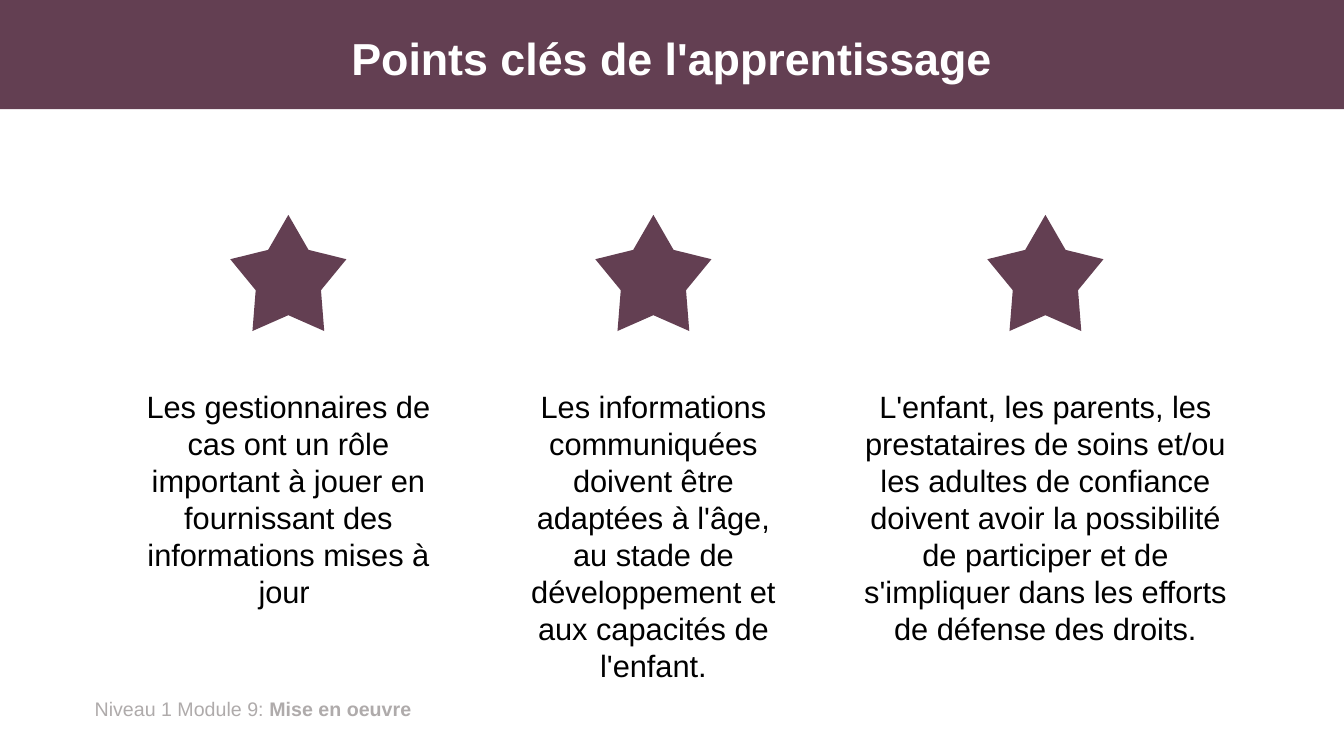
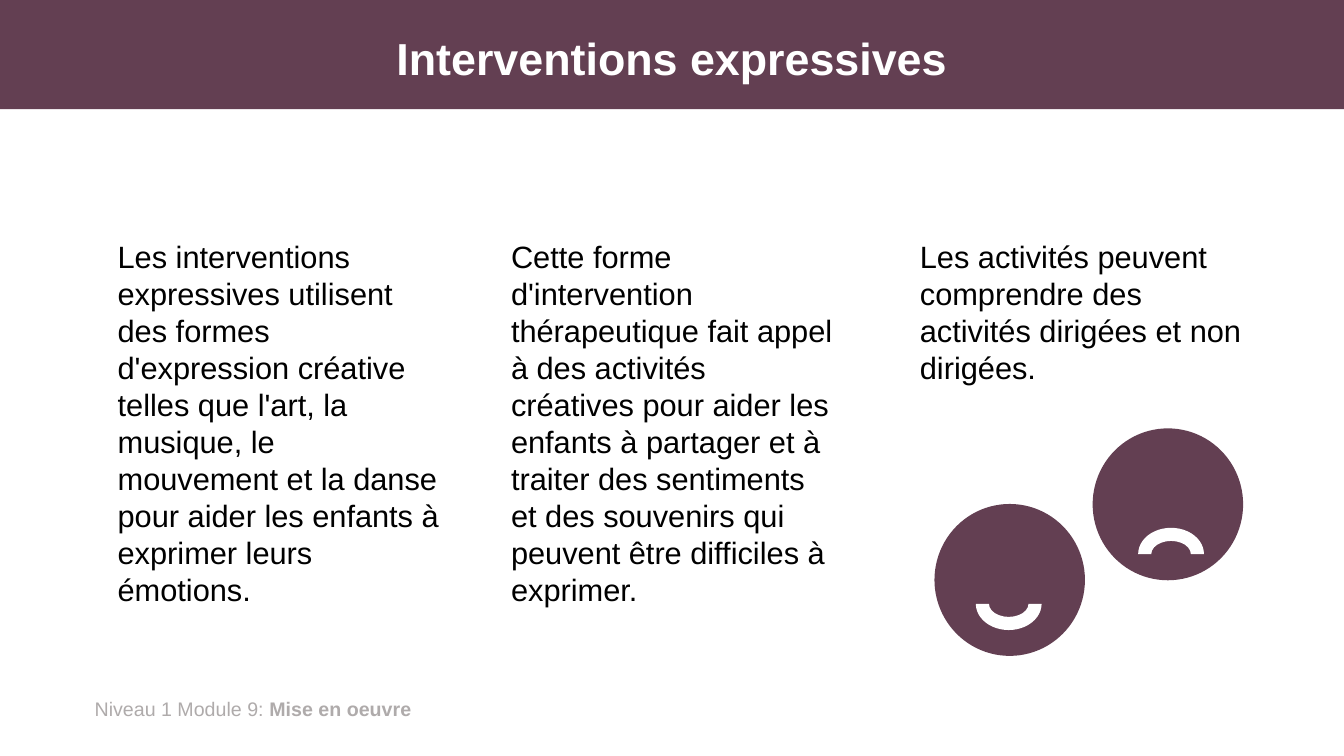
"""Build two training slides: key learning points and expressive interventions."""
from pptx import Presentation
from pptx.dml.color import RGBColor
from pptx.enum.shapes import MSO_SHAPE as Preset
from pptx.enum.text import MSO_ANCHOR as Anchor, MSO_AUTO_SIZE as AutoSize, PP_ALIGN as Align
from pptx.util import Pt

PLUM = RGBColor(0x63, 0x3F, 0x52)
WHITE = RGBColor(0xFF, 0xFF, 0xFF)
BLACK = RGBColor(0x00, 0x00, 0x00)
GREY = RGBColor(0xAF, 0xAB, 0xAB)

TITLES = ["Points clés de l'apprentissage", "Interventions expressives"]
KEY_POINTS = [
    (85, 242, "Les gestionnaires de cas ont un rôle important à jouer en "
              "fournissant des informations mises à jour "),
    (366, 201.5, "Les informations communiquées doivent être adaptées à l'âge, au stade de "
                 "développement et aux capacités de l'enfant."),
    (607, 279.5, "L'enfant, les parents, les prestataires de soins et/ou les adultes de "
                 "confiance doivent avoir la possibilité de participer et de s'impliquer "
                 "dans les efforts de défense des droits."),
]
INTERVENTIONS = [
    (77, 194, "Les interventions expressives utilisent des formes d'expression créative "
              "telles que l'art, la musique, le mouvement et la danse pour aider les "
              "enfants à exprimer leurs émotions."),
    (358, 220, "Cette forme d'intervention thérapeutique fait appel à des activités "
               "créatives pour aider les enfants à partager et à traiter des sentiments "
               "et des souvenirs qui peuvent être difficiles à exprimer."),
    (650, 87, "Les activités peuvent comprendre des activités dirigées et non dirigées."),
]
FACES = [(667.5, 360, 29.5, 52.5, 180), (780.5, 306, 32.5, 71, 0)]
STAR_SIZE = 83


def write(shape, text, size=22, colour=BLACK, bold=False, align=Align.LEFT,
          anchor=Anchor.TOP, spacing=None, auto_size=AutoSize.SHAPE_TO_FIT_TEXT):
    frame = shape.text_frame
    frame.word_wrap = True
    frame.auto_size = auto_size
    frame.vertical_anchor = anchor
    paragraph = frame.paragraphs[0]
    paragraph.alignment = align
    paragraph.line_spacing = spacing
    run = paragraph.add_run()
    run.text = text
    run.font.name = "Arial"
    run.font.size = Pt(size)
    run.font.bold = bold
    run.font.color.rgb = colour


def draw(shapes, preset, left, top, width, height, colour=PLUM):
    shape = shapes.add_shape(preset, Pt(left), Pt(top), Pt(width), Pt(height))
    shape.shadow.inherit = False
    shape.fill.solid()
    shape.fill.fore_color.rgb = colour
    shape.line.fill.background()
    return shape


presentation = Presentation()
presentation.slide_width = Pt(960)
presentation.slide_height = Pt(540)

for heading in TITLES:
    slide = presentation.slides.add_slide(presentation.slide_layouts[5])
    title = slide.shapes.title
    title.left, title.top, title.width, title.height = Pt(66), Pt(9.5), Pt(828), Pt(68.5)
    write(title, heading, size=32, colour=WHITE, bold=True, align=Align.CENTER,
          anchor=Anchor.MIDDLE, spacing=0.9, auto_size=AutoSize.NONE)
    band = draw(slide.shapes, Preset.RECTANGLE, 0, 0, 960, 78)
    title.element.addprevious(band.element)
    footer = slide.shapes.add_textbox(Pt(60.5), Pt(494.5), Pt(327.5), Pt(24.5))
    write(footer, "Niveau 1 Module 9: ", size=14, colour=GREY)
    write(footer, "Mise en oeuvre", size=14, colour=GREY, bold=True)

key_slide, expressive_slide = presentation.slides

for left, width, text in KEY_POINTS:
    draw(key_slide.shapes, Preset.STAR_5_POINT, left + (width - STAR_SIZE) / 2, 153.5,
         STAR_SIZE, STAR_SIZE).adjustments[0] = 0.281
    box = key_slide.shapes.add_textbox(Pt(left), Pt(273.5), Pt(width), Pt(167))
    write(box, text, align=Align.CENTER)

for left, top, mouth_left, mouth_top, rotation in FACES:
    face = expressive_slide.shapes.add_group_shape()
    draw(face.shapes, Preset.OVAL, left, top, 107.5, 108.5)
    mouth = draw(face.shapes, Preset.BLOCK_ARC, left + mouth_left, top + mouth_top,
                 47, 37.5, colour=WHITE)
    mouth.rotation = rotation

for left, height, text in INTERVENTIONS:
    box = expressive_slide.shapes.add_textbox(Pt(left), Pt(166.5), Pt(244), Pt(height))
    write(box, text)

presentation.save("out.pptx")
